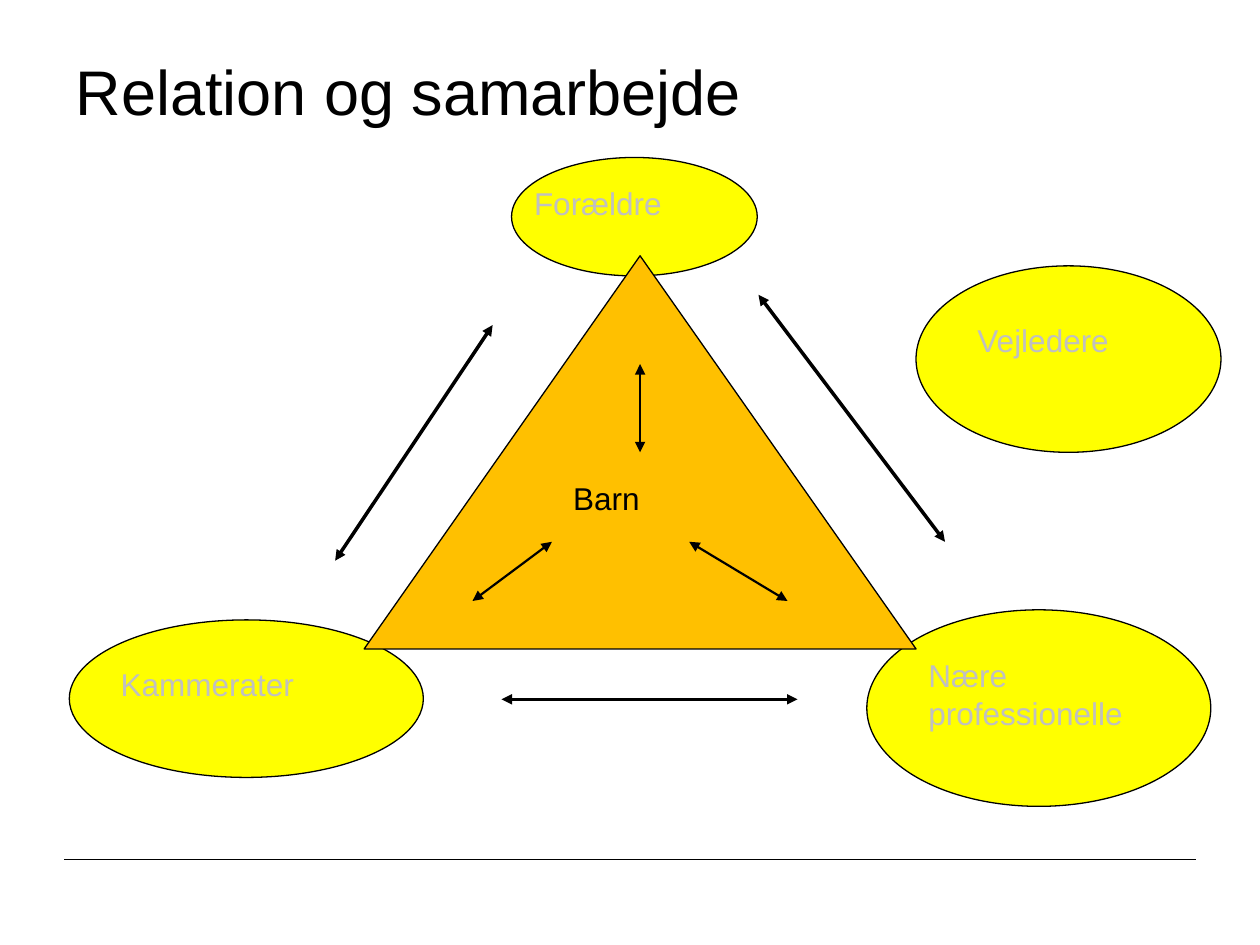
from pptx import Presentation
from pptx.dml.color import RGBColor
from pptx.enum.shapes import MSO_CONNECTOR as Link, MSO_SHAPE as Shape
from pptx.enum.text import MSO_ANCHOR as Anchor, PP_ALIGN as Align
from pptx.oxml.ns import qn
from pptx.util import Inches, Pt
from lxml.etree import SubElement

BLACK = RGBColor(0, 0, 0)
GREY = RGBColor(0xC0, 0xC0, 0xC0)
YELLOW = RGBColor(0xFF, 0xFF, 0)
ORANGE = RGBColor(0xFF, 0xC0, 0)

# Ellipse box, label box, label lines
GROUPS = [
    ((7.27, 2.11, 2.42, 1.48), (7.66, 2.5, 1.4, 0.4), ["Vejledere"]),
    ((0.55, 4.92, 2.81, 1.25), (0.86, 5.23, 2.06, 0.51), ["Kammerater"]),
    ((6.88, 4.84, 2.73, 1.56), (7.27, 5.16, 2.5, 0.91),
     ["Nære", "professionelle"]),
    ((4.06, 1.25, 1.95, 0.94), (4.14, 1.41, 2.11, 0.51), ["Forældre"]),
]
INNER = [(5.08, 2.89, 5.08, 3.59), (5.47, 4.3, 6.25, 4.77),
         (4.38, 4.3, 3.75, 4.77)]
OUTER = [(3.91, 2.58, 2.66, 4.45), (6.02, 2.34, 7.5, 4.3),
         (3.98, 5.55, 6.33, 5.55)]


def inches(box):
    return [Inches(v) for v in box]


def style(frame, size, color):
    for para in frame.paragraphs:
        para.alignment = Align.LEFT
        for run in para.runs:
            run.font.name = "Arial"
            run.font.size = Pt(size)
            run.font.color.rgb = color


def add_title(slide, box, text):
    title = slide.shapes.title
    title.left, title.top, title.width, title.height = inches(box)
    frame = title.text_frame
    frame.text = text
    frame.vertical_anchor = Anchor.MIDDLE
    style(frame, 36, BLACK)


def add_form(slide, kind, box, color):
    form = slide.shapes.add_shape(kind, *inches(box))
    form.shadow.inherit = False
    form.fill.solid()
    form.fill.fore_color.rgb = color
    form.line.color.rgb = BLACK
    form.line.width = Pt(0.75)


def add_label(slide, box, lines, color):
    frame = slide.shapes.add_textbox(*inches(box)).text_frame
    frame.word_wrap = True
    frame.text = "\n".join(lines)
    style(frame, 18, color)


def add_line(slide, ends, width, arrows=True):
    line = slide.shapes.add_connector(Link.STRAIGHT, *inches(ends))
    line.line.color.rgb = BLACK
    line.line.width = Pt(width)
    if arrows:
        for tag in ("a:headEnd", "a:tailEnd"):
            SubElement(line.line._get_or_add_ln(), qn(tag), type="triangle")
    SubElement(line._element.spPr, qn("a:effectLst"))


def add_model(slide):
    # Groups around the child
    for oval, _, _ in GROUPS:
        add_form(slide, Shape.OVAL, oval, YELLOW)
    add_form(slide, Shape.ISOSCELES_TRIANGLE, (2.89, 2.03, 4.38, 3.12), ORANGE)

    # Labels
    add_label(slide, (4.45, 3.75, 1.56, 0.51), ["Barn"], BLACK)
    for _, box, lines in GROUPS:
        add_label(slide, box, lines, GREY)

    # Relations
    for ends in INNER:
        add_line(slide, ends, 1.25)
    for ends in OUTER:
        add_line(slide, ends, 2)


def main():
    prs = Presentation()
    prs.slide_width, prs.slide_height = Inches(10), Inches(7.5)
    slide = prs.slides.add_slide(prs.slide_layouts[5])
    add_line(slide, (0.51, 6.82, 9.49, 6.82), 0.75, arrows=False)
    add_title(slide, (0.5, 0.28, 6.39, 0.87), "Relation og samarbejde")
    add_model(slide)
    prs.save("out.pptx")


if __name__ == "__main__":
    main()
